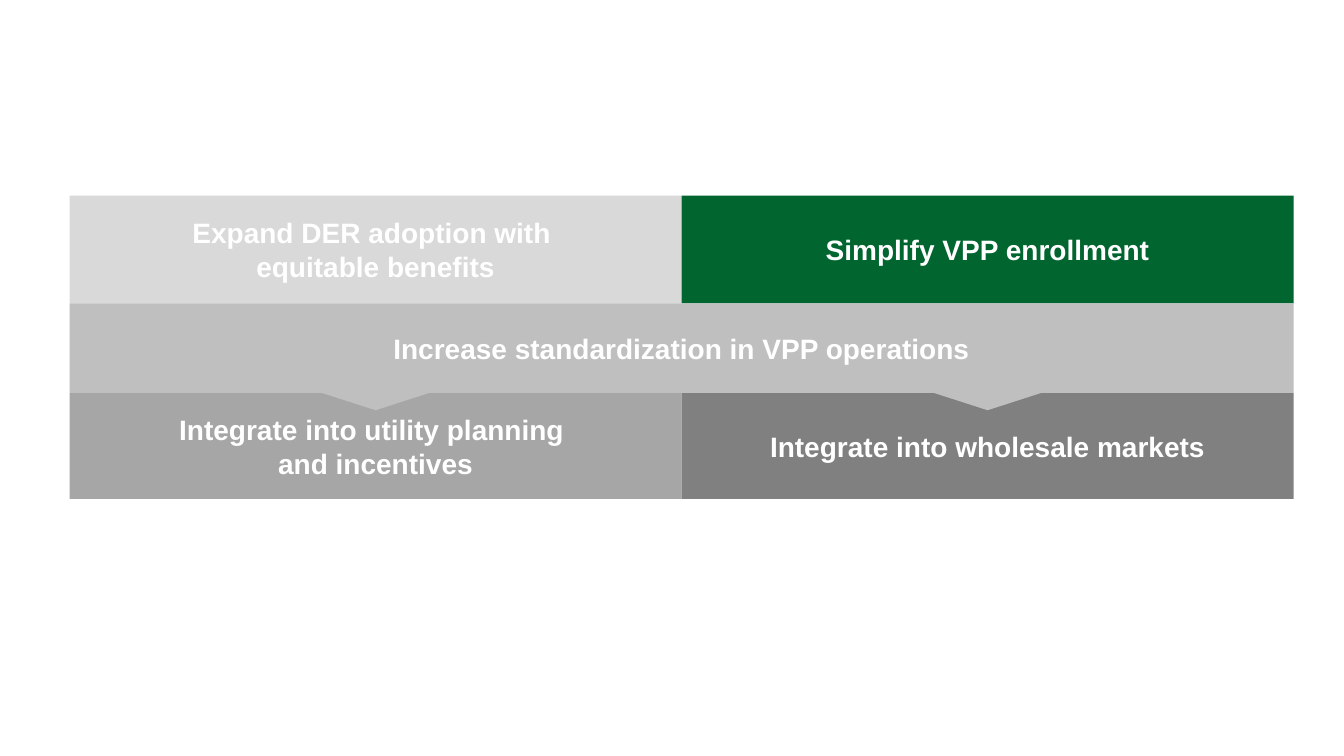
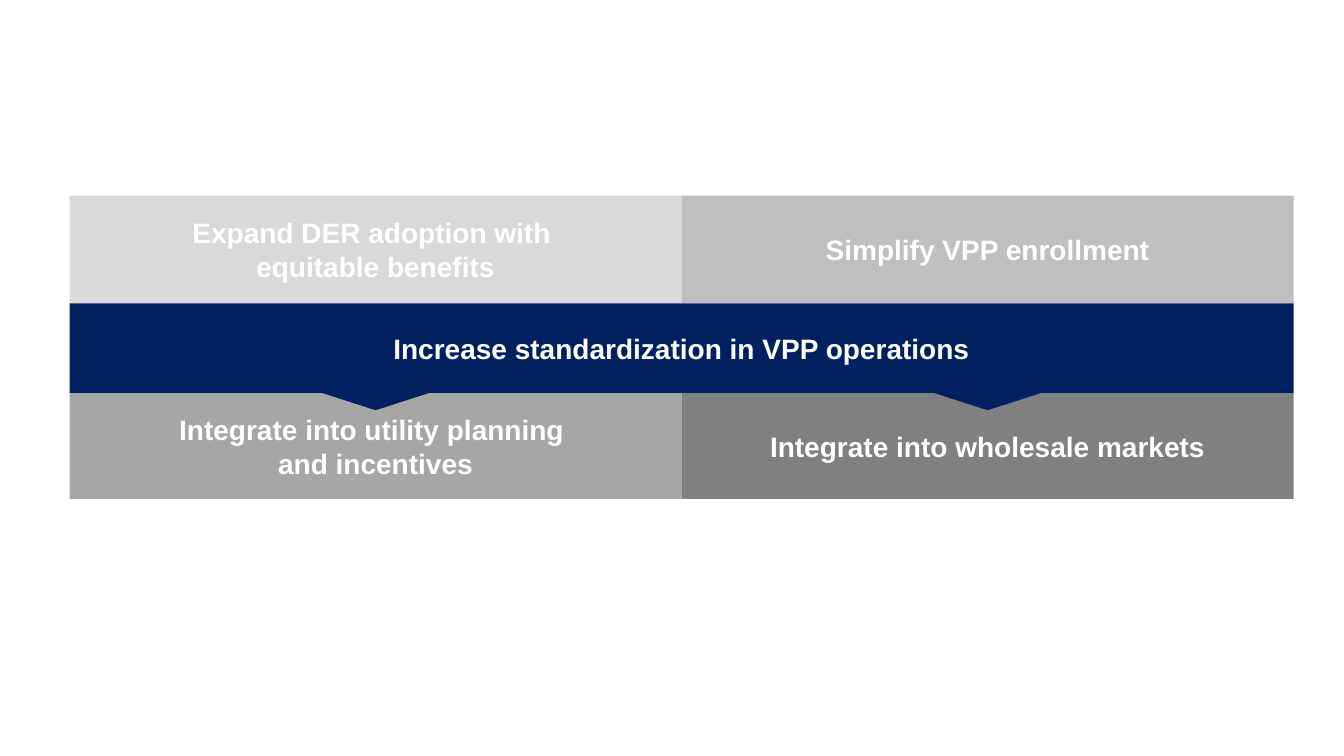
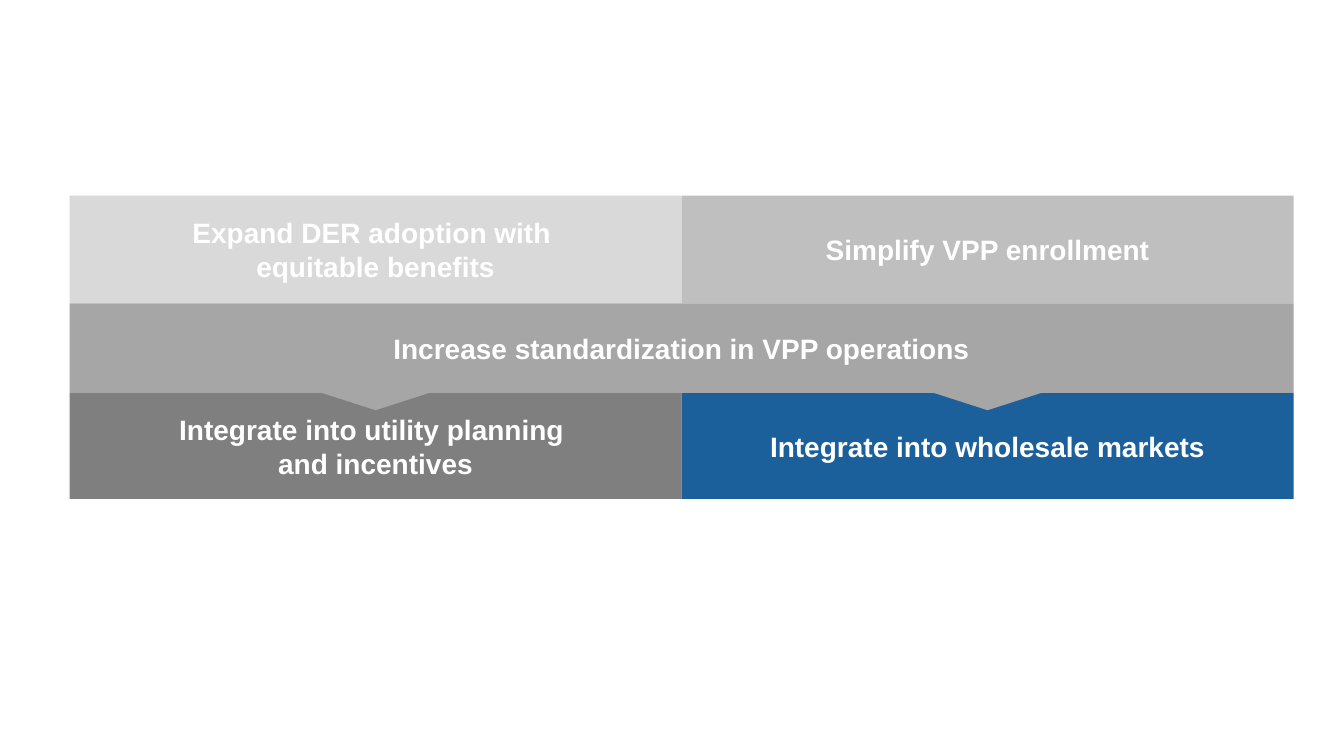
import pptx
import pptx.dml.color
import pptx.enum.shapes
import pptx.enum.text
import pptx.util

Inches = pptx.util.Inches
SHAPES = pptx.enum.shapes.MSO_SHAPE

FONT, TEXT_SIZE, TEXT_COLOUR = "Arial", 20, "FFFFFF"
LIGHT, SILVER, GREY, DARK = "D9D9D9", "BFBFBF", "A6A6A6", "808080"
GREEN, NAVY, BLUE = "00652E", "002060", "1B609B"

MATRIX_BOX = (0.69, 1.94, 12.14)
TOP_HEIGHT, BAND_HEIGHT, BOTTOM_HEIGHT = 1.07, 0.89, 1.05
ARROW_WIDTH, ARROW_HEIGHT, ARROW_OVERLAP = 1.24, 0.4, 0.23

TOP_LABELS = (["Expand DER adoption with ", "equitable benefits"], ["Simplify VPP enrollment"])
BAND_LABEL = ["Increase standardization in VPP operations"]
BOTTOM_LABELS = (
    ["Integrate into utility planning ", "and incentives"],
    ["Integrate into wholesale markets"],
)

SLIDE_COLOURS = (
    ((LIGHT, GREEN), SILVER, (GREY, DARK)),
    ((LIGHT, SILVER), NAVY, (GREY, DARK)),
    ((LIGHT, SILVER), GREY, ("7F7F7F", BLUE)),
)


def colour(hex_string):
    """Turn a hex string into a colour."""
    return pptx.dml.color.RGBColor.from_string(hex_string)


def add_filled_shape(shapes, kind, box, fill):
    """Add a flat shape without outline or shadow."""
    shape = shapes.add_shape(kind, *(Inches(length) for length in box))
    shape.shadow.inherit = False
    shape.fill.solid()
    shape.fill.fore_color.rgb = colour(fill)
    shape.line.fill.background()
    return shape


def add_cell(shapes, box, fill, lines):
    """Add a rectangle with a centred bold label."""
    shape = add_filled_shape(shapes, SHAPES.RECTANGLE, box, fill)
    frame = shape.text_frame
    frame.word_wrap = True
    frame.vertical_anchor = pptx.enum.text.MSO_ANCHOR.MIDDLE
    paragraph = frame.paragraphs[0]
    paragraph.alignment = pptx.enum.text.PP_ALIGN.CENTER
    for index, line in enumerate(lines):
        if index:
            paragraph.add_line_break()
        run = paragraph.add_run()
        run.text = line
        run.font.name = FONT
        run.font.size = pptx.util.Pt(TEXT_SIZE)
        run.font.bold = True
        run.font.color.rgb = colour(TEXT_COLOUR)


def add_matrix(slide, box, top_fills, band_fill, bottom_fills):
    """Add two rows of cells with a band between them that points downwards."""
    left, top, width = box
    half = width / 2
    band_top = top + TOP_HEIGHT
    bottom_top = band_top + BAND_HEIGHT
    shapes = slide.shapes.add_group_shape().shapes

    def add_row(row_top, height, fills, labels):
        """Add one row of equal cells."""
        for column, (fill, lines) in enumerate(zip(fills, labels)):
            add_cell(shapes, (left + column * half, row_top, half, height), fill, lines)

    add_row(top, TOP_HEIGHT, top_fills, TOP_LABELS)
    add_cell(shapes, (left, band_top, width, BAND_HEIGHT), band_fill, BAND_LABEL)
    add_row(bottom_top, BOTTOM_HEIGHT, bottom_fills, BOTTOM_LABELS)
    for column in range(2):
        arrow_left = left + (column + 0.5) * half - ARROW_WIDTH / 2
        arrow_box = (arrow_left, bottom_top - ARROW_OVERLAP, ARROW_WIDTH, ARROW_HEIGHT)
        add_filled_shape(shapes, SHAPES.DOWN_ARROW, arrow_box, band_fill)


def main():
    """Build the presentation."""
    presentation = pptx.Presentation()
    presentation.slide_width = Inches(13.33)
    presentation.slide_height = Inches(7.5)
    for fills in SLIDE_COLOURS:
        slide = presentation.slides.add_slide(presentation.slide_layouts[6])
        add_matrix(slide, MATRIX_BOX, *fills)
    presentation.save("out.pptx")


if __name__ == "__main__":
    main()
